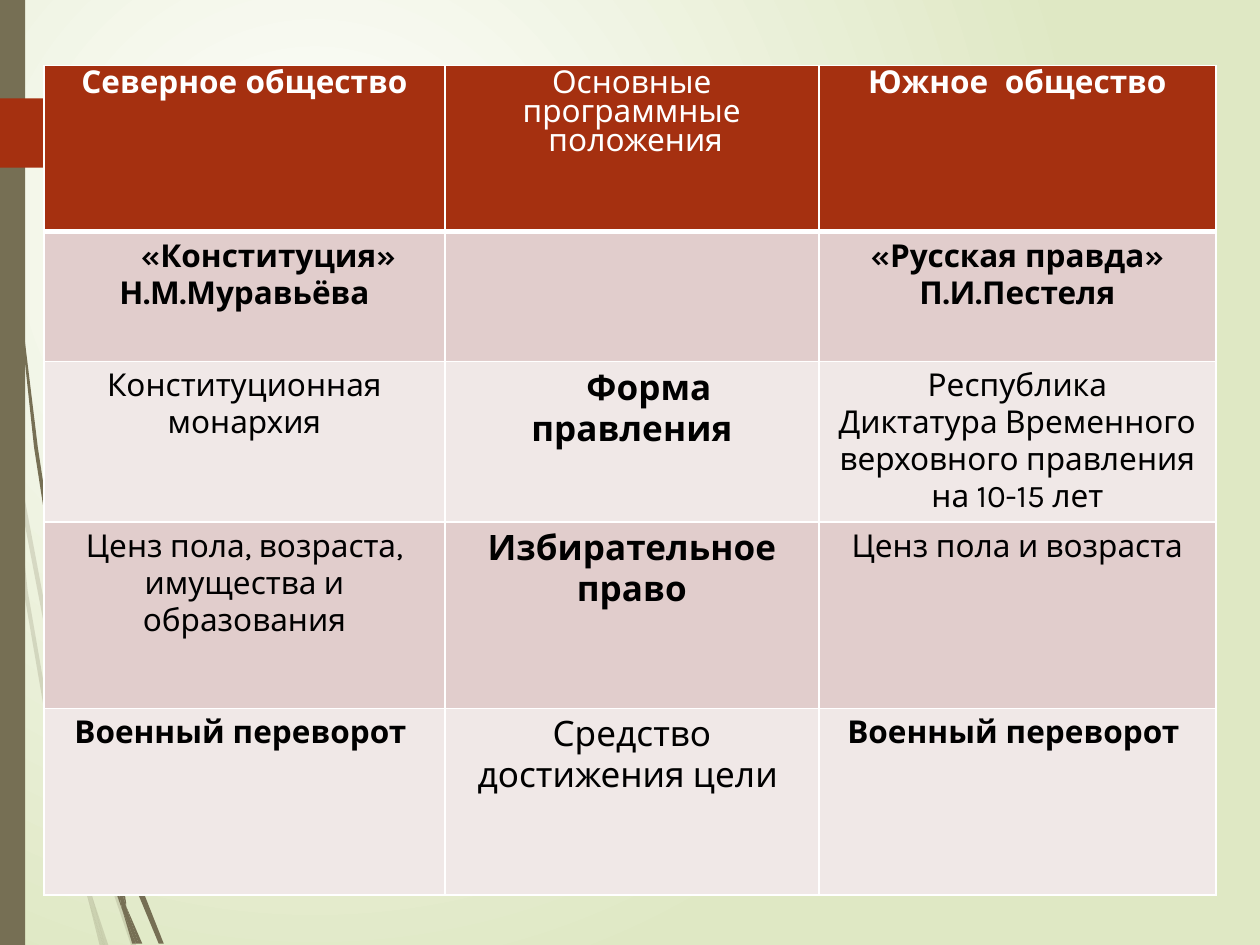
from lxml import etree
from pptx import Presentation
from pptx.dml.color import RGBColor
from pptx.enum.shapes import MSO_SHAPE
from pptx.enum.text import PP_ALIGN
from pptx.oxml.ns import qn
from pptx.util import Inches, Pt

CENTER = PP_ALIGN.CENTER
RECTANGLE = MSO_SHAPE.RECTANGLE

COLORS = {
    "white": "FFFFFF",
    "black": "000000",
    "lime": "DFE8C4",
    "olive": "766F54",
    "rust": "A53010",
    "band_dark": "E1CDCC",
    "band_light": "F0E8E7",
}

# Outlines of the grass blades, in inches
PALE_BLADES = [
    [(0.08, 3.5), (0.06, 3.22), (0, 2.82), (0, 2.99), (0.07, 3.44)],
    [(0.4, 5.22), (0.59, 5.99), (0.59, 5.86), (0.43, 5.2), (0.1, 3.45), (0.12, 3.76)],
    [(0.64, 6.07), (0.61, 5.96), (0.61, 6.1), (0.85, 6.94), (1.04, 7.5), (1.08, 7.5),
     (0.88, 6.92)],
    [(0.83, 7.5), (0.86, 7.5), (0.73, 7.11)],
    [(0.64, 6.83), (0.48, 6.19), (0.22, 4.69), (0.12, 3.76), (0.08, 3.5), (0.19, 4.7),
     (0.45, 6.21), (0.64, 6.93), (0.7, 7.14), (0.69, 7.07)],
    [(0.58, 5.99), (0.6, 6.46), (0.64, 6.83), (0.67, 6.92), (0.73, 7.11), (0.72, 7.06),
     (0.63, 6.46), (0.61, 6.1), (0.61, 6.08)],
    [(0.61, 5.84), (0.76, 4.62), (1.11, 3.49), (1.59, 2.45), (1.87, 1.98), (2.01, 1.75),
     (2.17, 1.54), (2.17, 1.53), (2.01, 1.75), (1.86, 1.97), (1.58, 2.44), (1.1, 3.48),
     (0.75, 4.61), (0.59, 5.84), (0.59, 5.86), (0.61, 5.96)],
    [(0.7, 7.14), (0.79, 7.5), (0.82, 7.5)],
    [(0.61, 6.08), (0.61, 6.1), (0.61, 5.96), (0.59, 5.86), (0.58, 5.99)],
    [(0.67, 6.92), (0.65, 6.83), (0.69, 7.07), (0.7, 7.14), (0.82, 7.5), (0.83, 7.5),
     (0.73, 7.11)],
]
DARK_BLADES = [
    [(0.05, 1.1), (0.14, 2.33), (0.27, 3.55), (0.46, 4.77), (0.47, 4.81), (0.45, 4.57),
     (0.45, 4.53), (0.3, 3.55), (0.15, 2.32), (0.06, 1.09), (0.04, 0.48), (0.03, 0),
     (0.02, 0), (0.03, 0.48)],
    [(0.73, 5.92), (0.88, 6.45), (0.88, 6.33), (0.88, 6.31), (0.77, 5.9), (0.5, 4.72),
     (0.53, 5.05)],
    [(0.94, 6.49), (0.91, 6.41), (0.91, 6.56), (1.09, 7.08), (1.26, 7.49), (1.3, 7.49),
     (1.13, 7.06)],
    [(0.91, 6.91), (0.81, 6.57), (0.6, 5.56), (0.53, 5.05), (0.47, 4.77), (0.56, 5.57),
     (0.77, 6.59), (0.92, 7.08), (0.97, 7.22), (0.96, 7.17)],
    [(0.5, 4.72), (0.48, 4.53), (0.44, 3.49), (0.48, 2.45), (0.52, 1.93), (0.58, 1.41),
     (0.51, 1.93), (0.47, 2.45), (0.43, 3.49), (0.45, 4.49), (0.49, 4.72)],
    [(1.1, 7.49), (1.13, 7.49), (1, 7.19)],
    [(0.47, 4.77), (0.53, 5.05), (0.5, 4.72), (0.49, 4.72), (0.45, 4.49), (0.45, 4.53)],
    [(0.91, 6.33), (1.03, 5.52), (1.31, 4.76), (1.69, 4.06), (1.91, 3.74), (2.03, 3.59),
     (2.16, 3.44), (2.15, 3.44), (2.03, 3.58), (1.91, 3.73), (1.68, 4.05), (1.29, 4.74),
     (1.01, 5.51), (0.88, 6.31), (0.91, 6.41)],
    [(0.97, 7.22), (1.05, 7.49), (1.08, 7.49)],
    [(0.88, 6.45), (0.91, 6.91), (0.96, 7.06), (1, 7.19), (1, 7.16), (0.91, 6.56),
     (0.9, 6.51)],
    [(0.88, 6.45), (0.9, 6.51), (0.91, 6.56), (0.91, 6.41), (0.88, 6.31), (0.88, 6.33)],
    [(0.96, 7.06), (0.91, 6.91), (0.96, 7.17), (0.97, 7.22), (1.08, 7.49), (1.1, 7.49),
     (1, 7.19)],
]
ARROW_TAG = [(0, 0.78), (1.21, 0.78), (1.24, 0.79), (1.49, 1.04), (1.49, 1.07),
             (1.24, 1.32), (1.21, 1.33), (0, 1.33)]

COLUMN_WIDTHS = [3.18, 2.97, 3.15]
ROW_HEIGHTS = [1.32, 1.03, 1.19, 1.48, 1.48]

# Font formats of the cells
HEAD = {"name": "League Spartan", "size": Pt(18), "bold": True}
HEAD_PLAIN = {**HEAD, "bold": False}
BODY = {"name": "Karla", "size": Pt(18), "bold": False}
BODY_BOLD = {**BODY, "bold": True}
TOPIC = {**BODY, "size": Pt(20)}
TOPIC_BOLD = {**TOPIC, "bold": True}

# Each cell: paragraphs, font format, first-line indent in inches
ROWS = [
    [(["Северное общество"], HEAD, 0),
     (["Основные программные", " положения"], HEAD_PLAIN, 0),
     (["Южное  общество"], HEAD, 0)],
    [(["«Конституция» Н.М.Муравьёва"], BODY_BOLD, 0.38),
     ([], BODY, 0),
     (["«Русская правда»", "П.И.Пестеля"], BODY_BOLD, 0)],
    [(["Конституционная монархия"], BODY, 0),
     (["Форма правления"], TOPIC_BOLD, 0.27),
     (["Республика", "Диктатура Временного верховного правления на 10-15 лет"], BODY, 0)],
    [(["Ценз пола, возраста, имущества и образования"], BODY, 0),
     (["Избирательное право"], TOPIC_BOLD, 0),
     (["Ценз пола и возраста"], BODY, 0)],
    [(["Военный переворот "], BODY_BOLD, 0),
     (["Средство достижения цели "], TOPIC, 0),
     (["Военный переворот "], BODY_BOLD, 0)],
]


def rgb(name):
    return RGBColor.from_string(COLORS[name])


def paint_background(page):
    fill = page.background.fill
    fill.gradient()
    for stop, name in zip(fill.gradient_stops, ["white", "lime"]):
        stop.color.rgb = rgb(name)
    gradient = page.element.find(".//" + qn("a:gradFill"))
    gradient.remove(gradient.find(qn("a:lin")))
    circle = etree.SubElement(gradient, qn("a:path"), {"path": "circle"})
    focus = {"l": "50000", "t": "50000", "r": "100000", "b": "100000"}
    etree.SubElement(circle, qn("a:fillToRect"), focus)


def paint_shape(shape, color, opacity=100):
    shape.shadow.inherit = False
    shape.fill.solid()
    shape.fill.fore_color.rgb = rgb(color)
    shape.line.fill.background()
    if opacity < 100:
        tint = shape.element.spPr.find(qn("a:solidFill"))[0]
        etree.SubElement(tint, qn("a:alpha"), {"val": str(opacity * 1000)})


def add_outline(shapes, points, color, opacity=100):
    corners = [(Inches(x), Inches(y)) for x, y in points]
    builder = shapes.build_freeform(*corners[0])
    builder.add_line_segments(corners[1:], close=True)
    paint_shape(builder.convert_to_shape(), color, opacity)


def add_blades(page, blades, opacity):
    group = page.shapes.add_group_shape()
    for points in blades:
        add_outline(group.shapes, points, "olive", opacity)


def add_borders(cell, bottom_width):
    properties = cell._tc.get_or_add_tcPr()
    for side, width in [("L", 1), ("R", 1), ("T", 1), ("B", bottom_width)]:
        line = etree.SubElement(properties, qn("a:ln" + side), {"w": str(Pt(width))})
        fill = etree.SubElement(line, qn("a:solidFill"))
        etree.SubElement(fill, qn("a:srgbClr"), {"val": COLORS["white"]})


def write_cell(cell, paragraphs, font_format, indent, color):
    frame = cell.text_frame
    for index, text in enumerate(paragraphs):
        para = frame.add_paragraph() if index else frame.paragraphs[0]
        para.alignment = CENTER
        if indent:
            para._p.get_or_add_pPr().set("indent", str(Inches(indent)))
        span = para.add_run()
        span.text = text
        span.font.color.rgb = rgb(color)
        for key, value in font_format.items():
            setattr(span.font, key, value)


def add_comparison_table(page):
    frame = page.shapes.add_table(
        len(ROW_HEIGHTS), len(COLUMN_WIDTHS), Inches(0.35), Inches(0.52),
        Inches(sum(COLUMN_WIDTHS)), Inches(sum(ROW_HEIGHTS)))
    table = frame.table
    for column, width in zip(table.columns, COLUMN_WIDTHS):
        column.width = Inches(width)
    for row_index, (row, height) in enumerate(zip(table.rows, ROW_HEIGHTS)):
        row.height = Inches(height)
        is_head = row_index == 0
        band = "rust" if is_head else ("band_light", "band_dark")[row_index % 2]
        for cell, content in zip(row.cells, ROWS[row_index]):
            add_borders(cell, 3 if is_head else 1)
            cell.fill.solid()
            cell.fill.fore_color.rgb = rgb(band)
            write_cell(cell, *content, "white" if is_head else "black")


def main():
    deck = Presentation()
    deck.slide_width, deck.slide_height = Inches(10), Inches(7.5)
    page = deck.slides.add_slide(deck.slide_layouts[6])

    # Backdrop
    paint_background(page)
    add_blades(page, PALE_BLADES, 20)
    add_blades(page, DARK_BLADES, 100)
    stripe = page.shapes.add_shape(RECTANGLE, 0, 0, Inches(0.2), Inches(7.5))
    paint_shape(stripe, "olive")
    add_outline(page.shapes, ARROW_TAG, "rust")

    # Comparison of the two societies
    add_comparison_table(page)
    deck.save("out.pptx")


if __name__ == "__main__":
    main()
